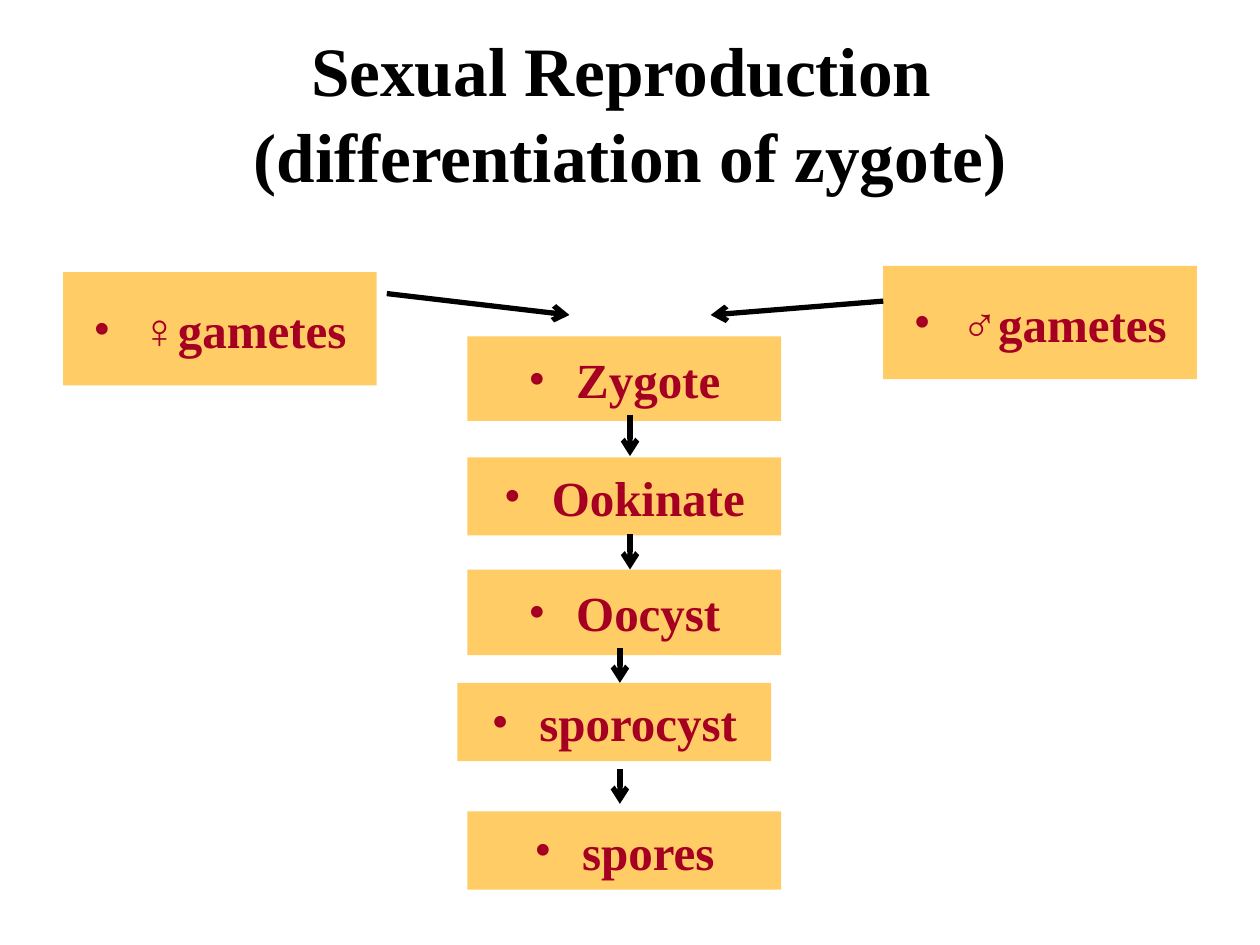
from pptx import Presentation
from pptx.dml.color import RGBColor
from pptx.enum.shapes import MSO_CONNECTOR as Connector, MSO_SHAPE as Shape
from pptx.enum.text import MSO_ANCHOR as Anchor, MSO_AUTO_SIZE as AutoSize, PP_ALIGN as Align
from pptx.oxml.ns import qn
from pptx.util import Inches, Pt
from lxml.etree import SubElement

BLACK = RGBColor(0x00, 0x00, 0x00)
SAND = RGBColor(0xFF, 0xCC, 0x66)
CRIMSON = RGBColor(0xA5, 0x00, 0x21)

BOX_WIDTH = 2.49
CENTRE_LEFT = 3.71


class LifeCycleSlide:
    title_font = {"name": "Times New Roman", "size": Pt(39.6), "bold": True}
    stage_font = {"name": "Times New Roman", "size": Pt(28), "bold": True}
    bullet_indent = Inches(0.38)

    def __init__(self, slide):
        self.slide = slide

    def fill_text(self, frame, text, font_format, color):
        frame.word_wrap = True
        frame.vertical_anchor = Anchor.MIDDLE
        paragraph = frame.paragraphs[0]
        paragraph.text = text
        paragraph.alignment = Align.CENTER
        for attribute, value in font_format.items():
            setattr(paragraph.font, attribute, value)
        paragraph.font.color.rgb = color
        return paragraph

    def title(self, text, left, top, width, height):
        heading = self.slide.shapes.title
        place = {"left": left, "top": top, "width": width, "height": height}
        for attribute, value in place.items():
            setattr(heading, attribute, Inches(value))
        frame = heading.text_frame
        frame.auto_size = AutoSize.NONE
        frame.margin_top = Inches(0.13)
        paragraph = self.fill_text(frame, text, self.title_font, BLACK)
        paragraph.line_spacing = 1.04

    def stage(self, text, left, top, height):
        box = self.slide.shapes.add_shape(
            Shape.RECTANGLE, Inches(left), Inches(top), Inches(BOX_WIDTH), Inches(height))
        box.shadow.inherit = False
        box.fill.solid()
        box.fill.fore_color.rgb = SAND
        box.line.fill.background()
        paragraph = self.fill_text(box.text_frame, text, self.stage_font, CRIMSON)
        # Bullet with a hanging indent, placed before the default run properties
        properties = paragraph._p.get_or_add_pPr()
        properties.set("marL", str(self.bullet_indent))
        properties.set("indent", str(-self.bullet_indent))
        SubElement(properties, qn("a:buFont"), typeface="Times New Roman")
        SubElement(properties, qn("a:buChar"), char="•")
        properties.append(properties.find(qn("a:defRPr")))

    def arrow(self, start, end):
        x1, y1, x2, y2 = (Inches(value) for value in (*start, *end))
        link = self.slide.shapes.add_connector(Connector.STRAIGHT, x1, y1, x2, y2)
        link.line.color.rgb = BLACK
        link.line.width = Pt(3)
        outline = link._element.spPr.find(qn("a:ln"))
        SubElement(outline, qn("a:tailEnd"), type="arrow")
        SubElement(link._element.spPr, qn("a:effectLst"))


def main():
    deck = Presentation()
    deck.slide_width, deck.slide_height = Inches(10), Inches(7.5)
    page = LifeCycleSlide(deck.slides.add_slide(deck.slide_layouts[5]))

    page.title("Sexual Reproduction \v(differentiation of zygote)\v", 0.5, 0.54, 9, 1.25)

    # Gametes and the arrows that join them
    page.stage("♀gametes", 0.5, 2.16, 0.9)
    page.stage("♂gametes", 7.01, 2.11, 0.9)
    page.arrow((7.01, 2.39), (5.64, 2.5))
    page.arrow((3.07, 2.33), (4.52, 2.5))

    # Stages from zygote to spores
    stages = [
        ("Zygote", CENTRE_LEFT, 2.67, 0.67),
        ("Ookinate", CENTRE_LEFT, 3.63, 0.62),
        ("Oocyst", CENTRE_LEFT, 4.52, 0.68),
        ("sporocyst", 3.63, 5.42, 0.62),
        ("spores", CENTRE_LEFT, 6.44, 0.62),
    ]
    for stage in stages:
        page.stage(*stage)

    # Downward arrows: x, from, to
    for x, top, bottom in [(5, 3.29, 3.62), (5, 4.24, 4.52),
                           (4.92, 5.14, 5.42), (4.92, 6.1, 6.38)]:
        page.arrow((x, top), (x, bottom))

    deck.save("out.pptx")


if __name__ == "__main__":
    main()
